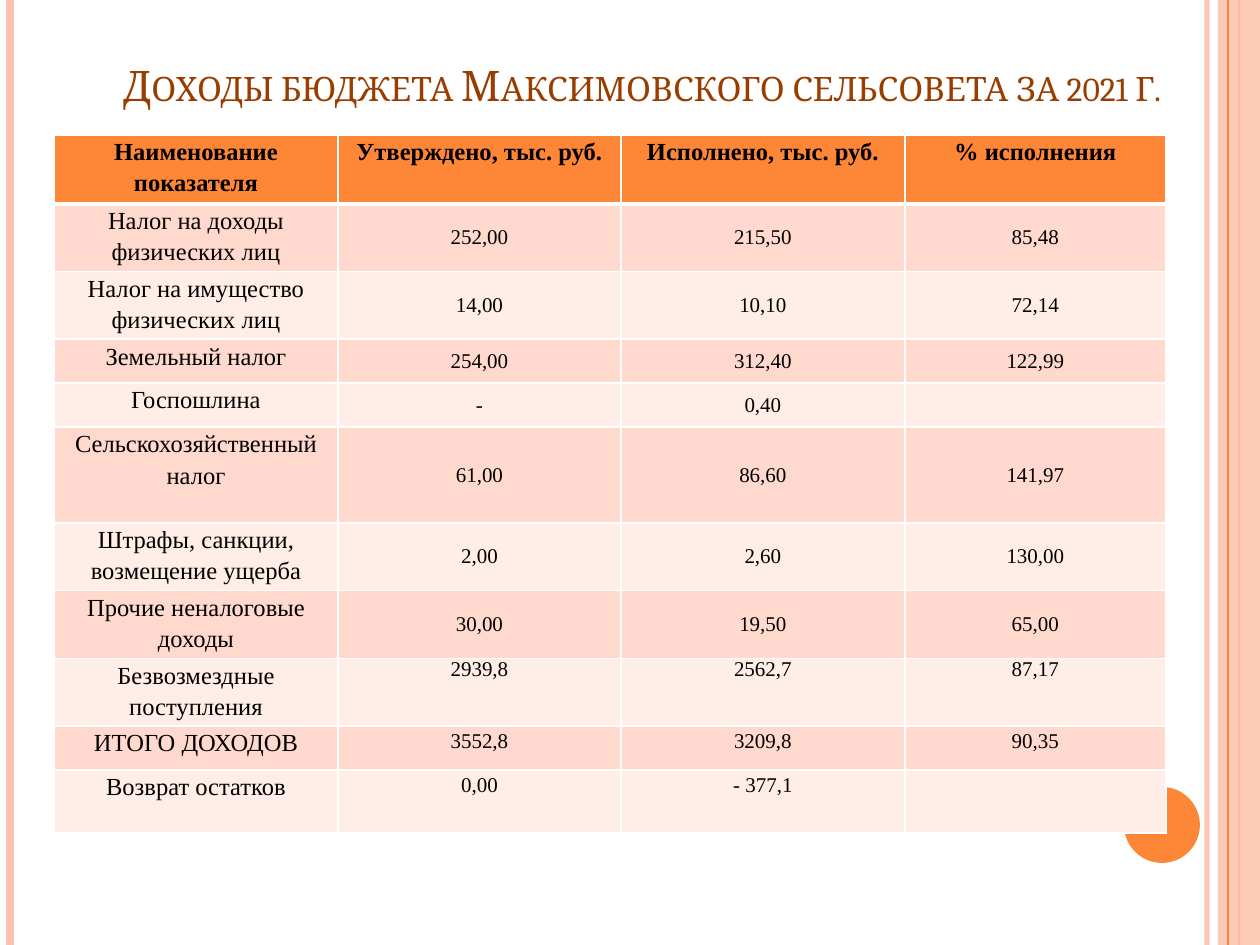
from lxml import etree
from pptx import Presentation
from pptx.dml.color import RGBColor
from pptx.enum.shapes import MSO_CONNECTOR as Connector, MSO_SHAPE as Shape
from pptx.enum.text import MSO_ANCHOR as Anchor, PP_ALIGN as Align
from pptx.oxml.ns import qn
from pptx.util import Pt

PX = 914400 // 126
WIDTH, HEIGHT = 1260, 945
COLORS = {"accent": "FE8637", "stripe": "FEC3AE", "title": "9A3D01", "text": "000000",
          "odd": "FFD9CE", "even": "FFEDE8", "border": "FFFFFF"}
COLUMNS = [284, 283, 284, 261]
ROWS = [
    (69, "Наименование показателя", "Утверждено, тыс. руб.", "Исполнено, тыс. руб.", "% исполнения"),
    (63, "Налог на доходы физических лиц", "252,00", "215,50", "85,48"),
    (63, "Налог на имущество физических лиц", "14,00", "10,10", "72,14"),
    (44, "Земельный налог", "254,00", "312,40", "122,99"),
    (44, "Госпошлина", "-", "0,40", ""),
    (96, "Сельскохозяйственный налог", "61,00", "86,60", "141,97"),
    (63, "Штрафы, санкции, возмещение ущерба", "2,00", "2,60", "130,00"),
    (63, "Прочие неналоговые доходы", "30,00", "19,50", "65,00"),
    (63, "Безвозмездные поступления", "2939,8", "2562,7", "87,17"),
    (44, "ИТОГО ДОХОДОВ", "3552,8", "3209,8", "90,35"),
    (63, "Возврат остатков", "0,00", "- 377,1", ""),
]
LAST_CENTERED_ROW = 7
FIRST_SPACED_ROW = 9


class BudgetSlide:
    """Draws the elements of a budget slide in one shared style."""

    def __init__(self, page):
        self.page = page

    def color(self, name):
        return RGBColor.from_string(COLORS[name])

    def set_alpha(self, element, percent):
        for tint in element.iter(qn("a:srgbClr")):
            etree.SubElement(tint, qn("a:alpha")).set("val", str(percent * 1000))

    def stripe(self, x, color, points, alpha=100):
        line = self.page.shapes.add_connector(Connector.STRAIGHT, x * PX, 0, x * PX, HEIGHT * PX)
        line.line.color.rgb = self.color(color)
        line.line.width = Pt(points)
        properties = line._element.spPr
        if alpha < 100:
            self.set_alpha(properties, alpha)
        etree.SubElement(properties, qn("a:effectLst"))

    def shape(self, kind, x, y, width, height, color, alpha=100):
        shape = self.page.shapes.add_shape(kind, x * PX, y * PX, width * PX, height * PX)
        shape.shadow.inherit = False
        shape.fill.solid()
        shape.fill.fore_color.rgb = self.color(color)
        shape.line.fill.background()
        if alpha < 100:
            self.set_alpha(shape._element.spPr, alpha)

    def put_text(self, frame, text, font, size, color, bold=False, spacing=None):
        frame.text = text
        para = frame.paragraphs[0]
        para.alignment = Align.CENTER
        para.line_spacing = spacing
        for span in para.runs:
            span.font.name = font
            span.font.size = Pt(size)
            span.font.bold = bold
            span.font.color.rgb = self.color(color)
        return para

    def title(self, text, x, y, width, height):
        box = self.page.shapes.add_textbox(x * PX, y * PX, width * PX, height * PX)
        frame = box.text_frame
        frame.word_wrap = True
        frame.vertical_anchor = Anchor.BOTTOM
        para = self.put_text(frame, text, "Cambria", 24, "title")
        para.runs[0].font._element.set("cap", "small")

    def borders(self, cell, row):
        properties = cell._tc.get_or_add_tcPr()
        thick = {0: "lnB", 1: "lnT"}.get(row)
        for side in ("lnL", "lnR", "lnT", "lnB"):
            edge = etree.SubElement(properties, qn(f"a:{side}"))
            edge.set("w", str(Pt(3 if side == thick else 1)))
            fill = etree.SubElement(edge, qn("a:solidFill"))
            etree.SubElement(fill, qn("a:srgbClr")).set("val", COLORS["border"])

    def cell(self, cell, text, row, column):
        header, label = row == 0, column == 0
        centered = not label and 0 < row <= LAST_CENTERED_ROW
        cell.margin_top = cell.margin_bottom = 0
        cell.margin_left = cell.margin_right = 0 if centered else 9 * PX
        cell.vertical_anchor = Anchor.MIDDLE if centered else Anchor.TOP
        spaced = header or label or row >= FIRST_SPACED_ROW
        self.put_text(cell.text_frame, text, "Times New Roman", 14 if header or label else 12,
                      "text", header, 1.15 if spaced else None)
        self.borders(cell, row)
        cell.fill.solid()
        cell.fill.fore_color.rgb = self.color("accent" if header else "odd" if row % 2 else "even")

    def table(self, x, y, columns, rows):
        heights = [height for height, *_ in rows]
        table = self.page.shapes.add_table(len(rows), len(columns), x * PX, y * PX,
                                           sum(columns) * PX, sum(heights) * PX).table
        for column, width in zip(table.columns, columns):
            column.width = width * PX
        for row, (height, *texts) in enumerate(rows):
            table.rows[row].height = height * PX
            for column, text in enumerate(texts):
                self.cell(table.cell(row, column), text, row, column)


def main():
    deck = Presentation()
    deck.slide_width, deck.slide_height = WIDTH * PX, HEIGHT * PX
    slide = BudgetSlide(deck.slides.add_slide(deck.slide_layouts[6]))
    slide.stripe(1207, "stripe", 3, 93)
    slide.stripe(10, "stripe", 4.5)
    slide.stripe(1239, "accent", 1.5)
    slide.shape(Shape.RECTANGLE, 1218, 0, 42, HEIGHT, "stripe", 87)
    slide.stripe(1228, "accent", 0.75)
    slide.shape(Shape.OVAL, 1124, 787, 76, 76, "accent")
    slide.title("Доходы бюджета Максимовского сельсовета за 2021 г.", 63, 44, 1158, 72)
    slide.table(54, 135, COLUMNS, ROWS)
    deck.save("out.pptx")


if __name__ == "__main__":
    main()
